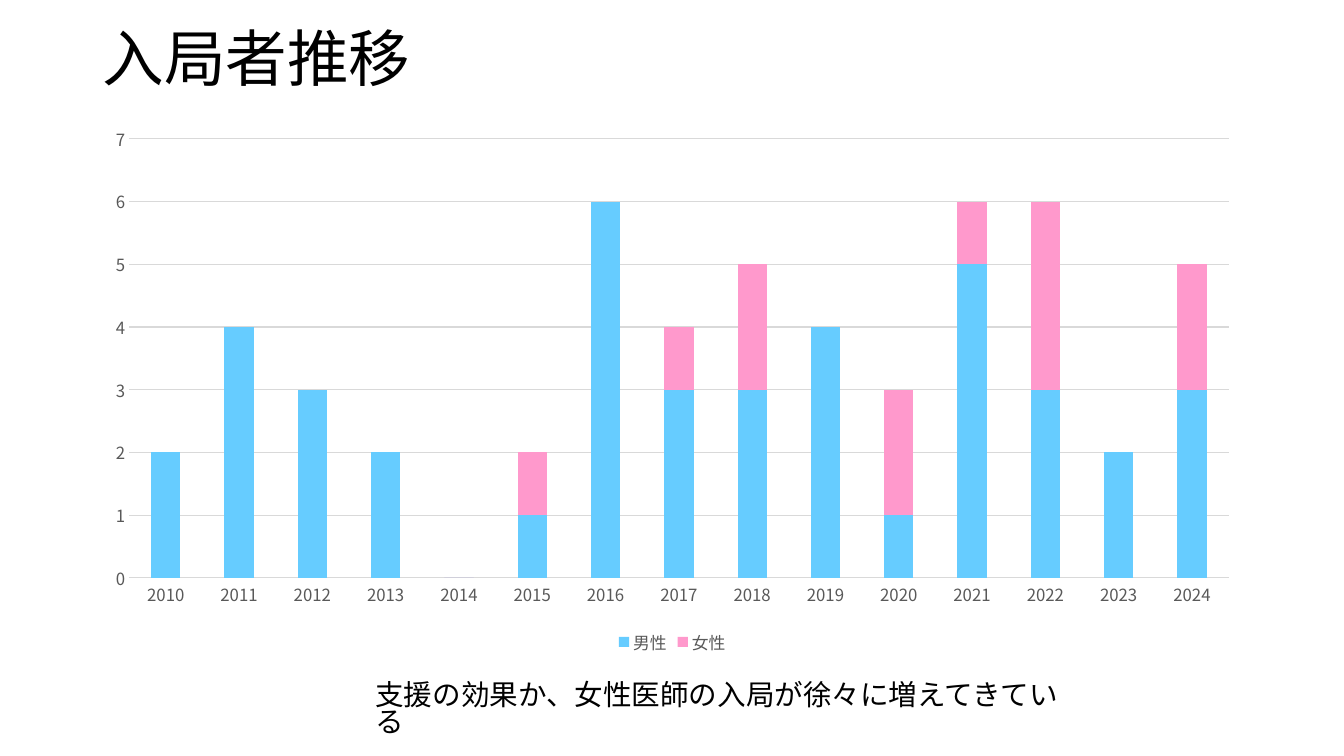
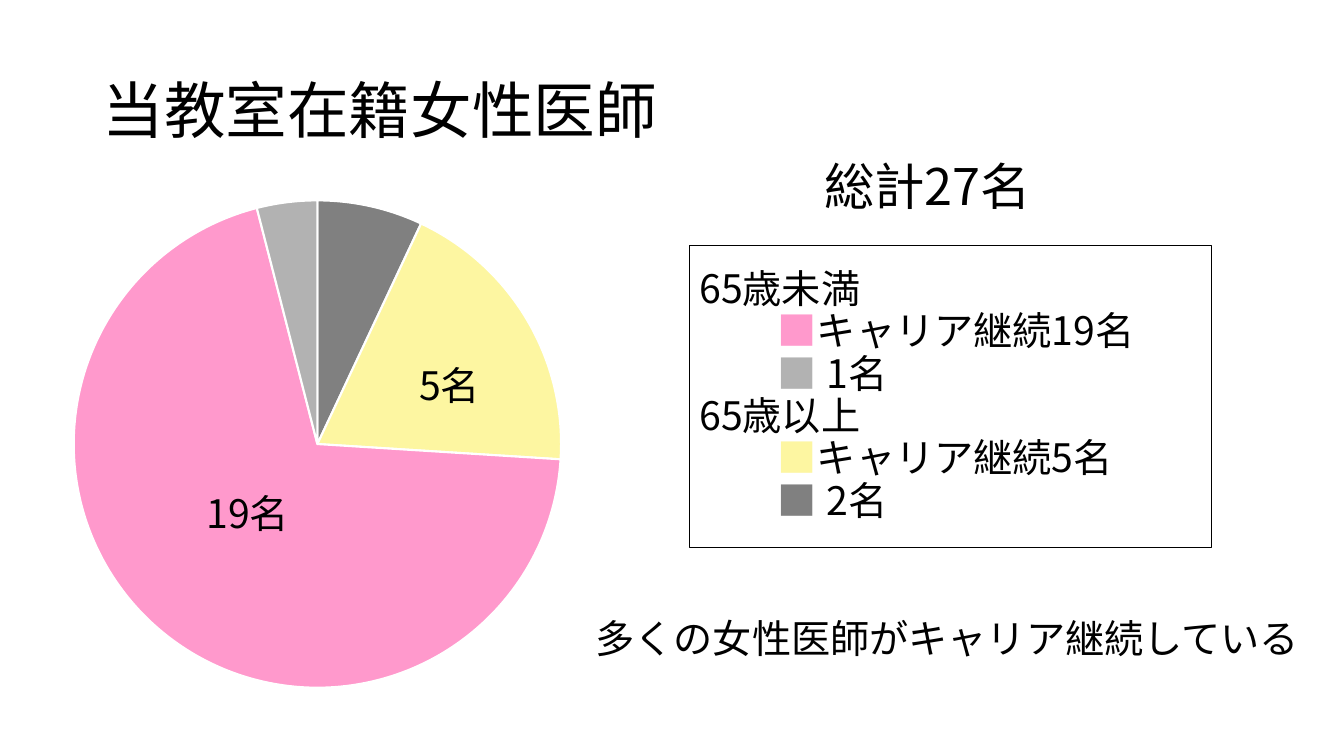
from lxml import etree
from pptx import Presentation
from pptx.chart.data import CategoryChartData
from pptx.dml.color import RGBColor
from pptx.enum.chart import XL_CHART_TYPE, XL_LEGEND_POSITION, XL_TICK_MARK
from pptx.enum.shapes import MSO_SHAPE
from pptx.enum.text import MSO_ANCHOR, PP_ALIGN
from pptx.oxml.ns import qn
from pptx.util import Pt

STACK, PIE = XL_CHART_TYPE.COLUMN_STACKED, XL_CHART_TYPE.PIE
BOTTOM = XL_LEGEND_POSITION.BOTTOM
NO_TICK = XL_TICK_MARK.NONE
RECT = MSO_SHAPE.RECTANGLE
TOP, MIDDLE = MSO_ANCHOR.TOP, MSO_ANCHOR.MIDDLE
LEFT = PP_ALIGN.LEFT

FACE = "Noto Sans CJK JP"
COLORS = {
    "black": "000000",
    "white": "FFFFFF",
    "label": "595959",
    "grid": "D9D9D9",
    "blue": "66CCFF",
    "pink": "FF99CC",
    "yellow": "FDF6A1",
    "light": "B2B2B2",
    "dark": "808080",
}
MEN = (2, 4, 3, 2, 0, 1, 6, 3, 3, 4, 1, 5, 3, 2, 3)
WOMEN = (0, 0, 0, 0, 0, 1, 0, 1, 2, 0, 2, 1, 3, 0, 2)
SHARES = {"dark": 7, "yellow": 19, "pink": 70, "light": 4}
KEY = [
    (None, "65歳未満"),
    ("pink", "キャリア継続19名"),
    ("light", "1名"),
    (None, "65歳以上"),
    ("yellow", "キャリア継続5名"),
    ("dark", "2名"),
]


def rgb(name):
    return RGBColor.from_string(COLORS[name])


def set_font(font, size, color="black"):
    font.name = FACE
    font.size = Pt(size)
    font.color.rgb = rgb(color)


def set_asian(element):
    """Use the same face for East Asian glyphs."""
    for latin in element.iter(qn("a:latin")):
        asian = etree.Element(qn("a:ea"), typeface=FACE)
        latin.addnext(asian)


def set_line(line, color, width=0.75):
    line.color.rgb = rgb(color)
    line.width = Pt(width)


def add_text(slide, text, box, size, anchor=MIDDLE, spacing=0.9, before=0):
    shape = slide.shapes.add_textbox(*map(Pt, box))
    frame = shape.text_frame
    frame.word_wrap = True
    frame.vertical_anchor = anchor
    frame.text = text
    para = frame.paragraphs[0]
    para.line_spacing = spacing
    para.space_before = Pt(before)
    set_font(para.runs[0].font, size)
    set_asian(shape.element)


def add_title(slide, text, top, height):
    add_text(slide, text, (66.2, top, 828, height), 44)


def add_chart(slide, kind, box, names, series):
    data = CategoryChartData()
    data.categories = names
    for name, values in series:
        data.add_series(name, values)
    chart = slide.shapes.add_chart(kind, *map(Pt, box), data).chart
    chart.has_title = False
    chart.has_legend = False
    set_font(chart.font, 10)
    return chart


def add_bars(slide, box):
    years = [str(year) for year in range(2010, 2025)]
    chart = add_chart(slide, STACK, box, years, [("男性", MEN), ("女性", WOMEN)])
    plot = chart.plots[0]
    plot.gap_width, plot.overlap = 150, 100
    for series, color in zip(plot.series, ("blue", "pink")):
        series.format.fill.solid()
        series.format.fill.fore_color.rgb = rgb(color)
        series.invert_if_negative = False

    across, up = chart.category_axis, chart.value_axis
    for axis in (across, up):
        axis.major_tick_mark = axis.minor_tick_mark = NO_TICK
        set_font(axis.tick_labels.font, 12, "label")
    set_line(across.format.line, "grid")
    up.format.line.fill.background()
    up.minimum_scale, up.maximum_scale, up.major_unit = 0, 7, 1
    set_line(up.major_gridlines.format.line, "grid")

    chart.has_legend = True
    chart.legend.position = BOTTOM
    chart.legend.include_in_layout = False
    set_font(chart.legend.font, 12, "label")
    set_asian(chart.element)


def add_pie(slide, box):
    series = [("Series 1", SHARES.values())]
    chart = add_chart(slide, PIE, box, list("1234"), series)
    plot = chart.plots[0]
    plot.vary_by_categories = True
    for index, color in enumerate(SHARES):
        style = plot.series[0].points[index].format
        style.fill.solid()
        style.fill.fore_color.rgb = rgb(color)
        set_line(style.line, "white", 1.5)
    set_asian(chart.element)


def add_run(para, text, color):
    run = para.add_run()
    run.text = text
    set_font(run.font, 28, color)
    return run


def add_key(slide, box):
    """Framed legend: age groups with indented, coloured entries."""
    frame = slide.shapes.add_shape(RECT, *map(Pt, box))
    frame.shadow.inherit = False
    frame.fill.background()
    set_line(frame.line, "black")
    body = frame.text_frame
    body.word_wrap = True
    body.vertical_anchor = MIDDLE
    for index, (color, text) in enumerate(KEY):
        para = body.add_paragraph() if index else body.paragraphs[0]
        para.alignment = LEFT
        para.line_spacing = 0.9
        if color:
            para._p.get_or_add_pPr().set("marL", str(Pt(56)))
            mark = add_run(para, "■", color)
            if text[0].isdigit():
                # Letter spacing sets the digit apart from its mark.
                mark._r.get_or_add_rPr().set("spc", "700")
        add_run(para, text, "black")
    set_asian(frame.element)


def add_trend(slide):
    add_title(slide, "入局者推移", 13, 62.5)
    add_bars(slide, (66.2, 82.4, 828, 388))
    add_text(slide, "支援の効果か、女性医師の入局が徐々に増えてきている",
             (261, 484.5, 516, 27.5), 20.4, TOP, 0.8, 10)


def add_staff(slide):
    add_title(slide, "当教室在籍女性医師", 29, 104)
    add_pie(slide, (-75, 133.2, 603.5, 368))
    add_text(slide, "総計27名", (581.6, 107.3, 174, 55.5), 36)
    add_key(slide, (492.5, 175.2, 373, 216))
    add_text(slide, "19名", (140.4, 340.6, 99.5, 55.5), 28)
    add_text(slide, "5名", (292.3, 249.2, 99.5, 55.5), 28)
    add_text(slide, "多くの女性医師がキャリア継続している",
             (418.3, 420, 557, 75.5), 28)


def main():
    deck = Presentation()
    deck.slide_width, deck.slide_height = Pt(960), Pt(540)
    for build in (add_trend, add_staff):
        build(deck.slides.add_slide(deck.slide_layouts[6]))
    deck.save("out.pptx")


if __name__ == "__main__":
    main()
